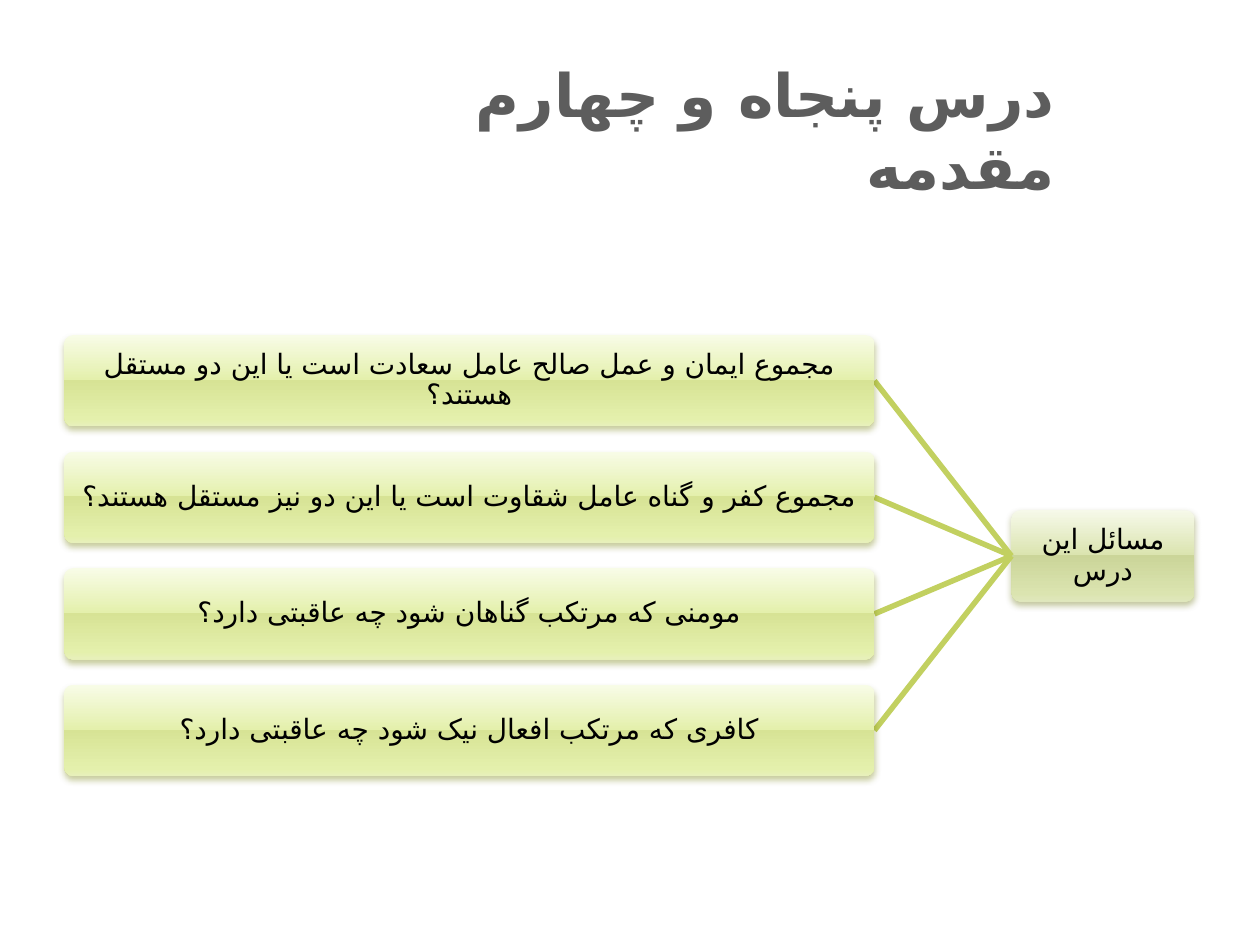
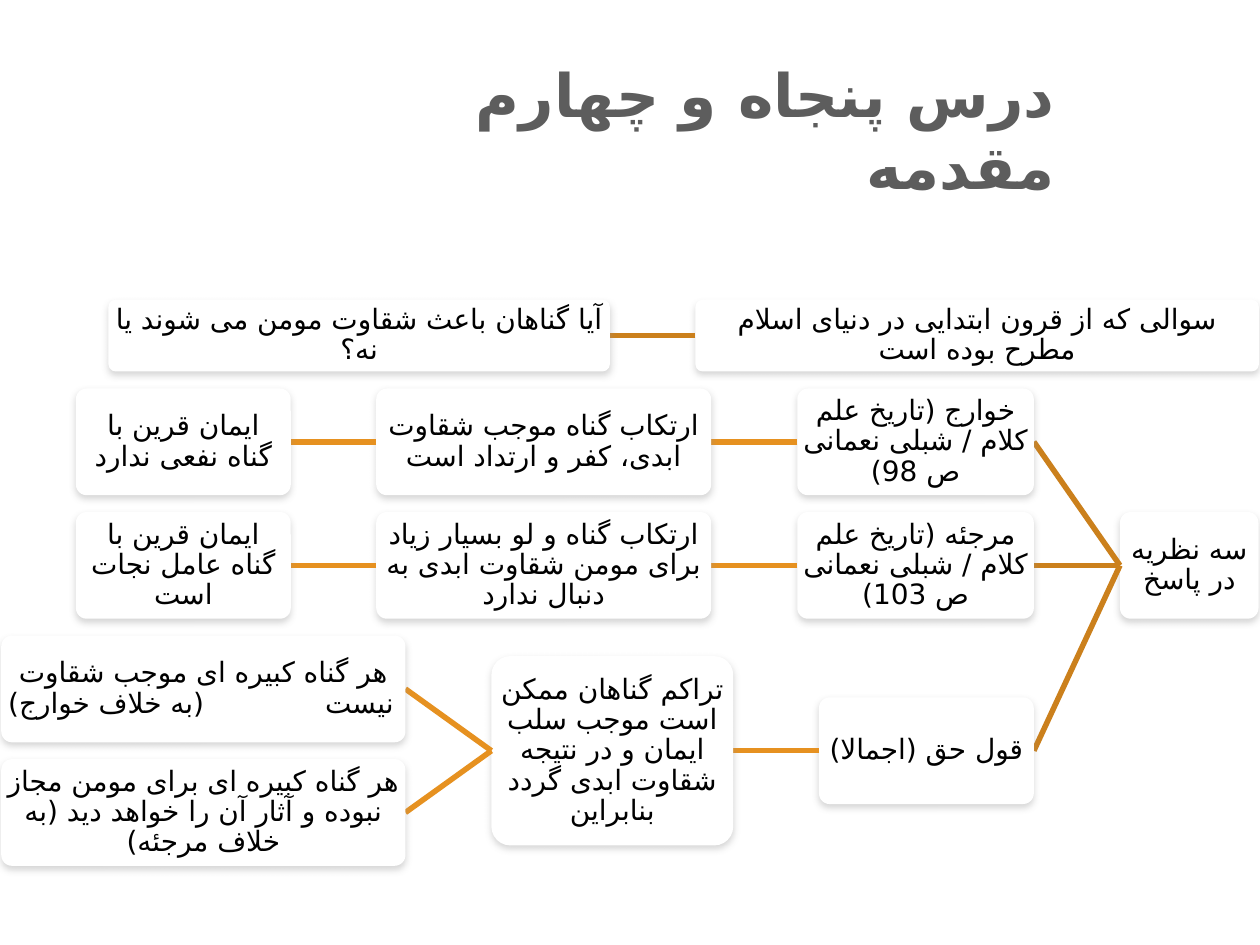
import pptx
import pptx.util
import pptx.dml.color
import pptx.enum.shapes
import pptx.enum.text
import pptx.oxml.ns
import lxml.etree

Pt = pptx.util.Pt
RGBColor = pptx.dml.color.RGBColor
ALIGN = pptx.enum.text.PP_ALIGN
ANCHOR = pptx.enum.text.MSO_ANCHOR
qn = pptx.oxml.ns.qn
sub = lxml.etree.SubElement

# Shared style
FONT = "Karla"
SCRIPT = "DejaVu Sans"  # Arabic letters, which Karla lacks
GREY = RGBColor(0x5D, 0x5D, 0x5D)
BLACK = RGBColor(0, 0, 0)
WHITE = RGBColor(255, 255, 255)
LIME = RGBColor(0xC2, 0xD0, 0x60)
BROWN = RGBColor(0xCB, 0x80, 0x1C)
AMBER = RGBColor(0xE6, 0x91, 0x20)
STOPS = (0, 49, 49, 92, 100)
ROOT = ("F6F9E9", "DBE4B0", "CBD599", "DBE4B0", "E0E7BE")
LEAF = ("F8FCE7", "E4F0AC", "D7E395", "E4F0AC", "E7F0BB")
TITLE = "درس پنجاه و چهارم\nمقدمه"


def write(frame, text, size, color, align, bold=False, space=1.0, side=0.9, anchor=ANCHOR.MIDDLE):
    """Fill a frame with right-to-left text."""
    frame.word_wrap = True
    frame.margin_left = frame.margin_right = Pt(side)
    frame.margin_top = frame.margin_bottom = 0
    frame.vertical_anchor = anchor
    frame.text = text
    for para in frame.paragraphs:
        para.alignment = align
        para.line_spacing = space
        para._p.get_or_add_pPr().set("rtl", "1")
        for run in para.runs:
            run.font.size = Pt(size)
            run.font.bold = bold
            run.font.name = FONT
            run.font.color.rgb = color
            sub(run._r.get_or_add_rPr(), qn("a:cs"), typeface=SCRIPT)


def node(slide, x, y, w, h, text, shade, tones=None):
    """Draw a rounded box with a soft shadow, white or graded."""
    box = slide.shapes.add_shape(
        pptx.enum.shapes.MSO_SHAPE.ROUNDED_RECTANGLE, Pt(x), Pt(y), Pt(w), Pt(h))
    box.adjustments[0] = 0.1
    if tones:
        box.fill.gradient()
        box.fill.gradient_angle = 270
        stops = box._element.spPr.find(".//" + qn("a:gsLst"))
        for old in list(stops):
            stops.remove(old)
        for pos, tone in zip(STOPS, tones):
            stop = sub(stops, qn("a:gs"), pos=str(pos * 1000))
            sub(stop, qn("a:srgbClr"), val=tone)
    else:
        box.fill.solid()
        box.fill.fore_color.rgb = WHITE
    box.line.fill.background()
    box.shadow.inherit = False
    glow = sub(box._element.spPr.find(qn("a:effectLst")), qn("a:outerShdw"),
               blurRad=str(Pt(4)), dist=str(Pt(2)), dir="5400000", rotWithShape="0")
    tint = sub(glow, qn("a:srgbClr"), val=shade)
    sub(tint, qn("a:alpha"), val="38000")
    write(box.text_frame, text, 16, BLACK, ALIGN.CENTER, space=0.9)
    return box


deck = pptx.Presentation()
deck.slide_width, deck.slide_height = Pt(720), Pt(540)

# Slide 1: four questions branching from one root
# Each item: x, y, w, h, text, parent index, link colour, shadow, tones
asks = [
    "مجموع ایمان و عمل صالح عامل سعادت است یا این دو مستقل هستند؟",
    "مجموع کفر و گناه عامل شقاوت است یا این دو نیز مستقل هستند؟",
    "مومنی که مرتکب گناهان شود چه عاقبتی دارد؟",
    "کافری که مرتکب افعال نیک شود چه عاقبتی دارد؟",
]
first = [(578, 291.6, 104.6, 52.2, "مسائل این درس", None, None, "626C00", ROOT)]
for i, ask in enumerate(asks):
    first.append((36.7, 191.5 + 66.6 * i, 463, 52.2, ask, 0, LIME, "6F7B00", LEAF))

# Slide 2: one question with its answer, then three theories
# Each item: x, w, row, h, text, parent index, link colour
TOP, STEP, HIGH = 222, 70.6, 61
plan = [
    (397.4, 322, -0.86, 41, "سوالی که از قرون ابتدایی در دنیای اسلام مطرح بوده است", None, None),
    (62, 286.5, -0.86, 41, "آیا گناهان باعث شقاوت مومن می شوند یا نه؟", 0, BROWN),
    (640, 79.2, 1, HIGH, "سه نظریه در پاسخ", None, None),
    (455.6, 135.2, 0, HIGH, "خوارج (تاریخ علم کلام / شبلی نعمانی ص 98)", 2, BROWN),
    (215, 191.4, 0, HIGH, "ارتکاب گناه موجب شقاوت ابدی، کفر و ارتداد است", 3, AMBER),
    (43.4, 122.8, 0, HIGH, "ایمان قرین با گناه نفعی ندارد", 4, AMBER),
    (455.6, 135.2, 1, HIGH, "مرجئه (تاریخ علم کلام / شبلی نعمانی ص 103)", 2, BROWN),
    (215, 191.4, 1, HIGH, "ارتکاب گناه و لو بسیار زیاد برای مومن شقاوت ابدی به دنبال ندارد", 6, AMBER),
    (43.4, 122.8, 1, HIGH, "ایمان قرین با گناه عامل نجات است", 7, AMBER),
    (468, 122.8, 2.5, HIGH, "قول حق (اجمالا)", 2, BROWN),
    (280.8, 138.2, 2.5, 108.2,
     "تراکم گناهان ممکن است موجب سلب ایمان و در نتیجه شقاوت ابدی گردد بنابراین", 9, AMBER),
    (0.7, 231, 2, HIGH, "هر گناه کبیره ای موجب شقاوت\nنیست", 10, AMBER),
    (0.7, 231, 3, HIGH,
     "هر گناه کبیره ای برای مومن مجاز نبوده و آثار آن را خواهد دید (به خلاف مرجئه)", 10, AMBER),
]
second = []
for x, w, row, h, text, up, color in plan:
    y = TOP + STEP * row + (HIGH - h) / 2
    second.append((x, y, w, h, text, up, color, "979797", None))

# Draw both slides
for tree in (first, second):
    slide = deck.slides.add_slide(deck.slide_layouts[6])

    # Title
    head = slide.shapes.add_textbox(Pt(36), Pt(25.2), Pt(570.2), Pt(90))
    write(head.text_frame, TITLE, 34.2, GREY, ALIGN.RIGHT, bold=True, side=3.6,
          anchor=ANCHOR.BOTTOM)

    # Links and boxes
    for x, y, w, h, text, up, color, shade, tones in tree:
        if up is not None:
            px, py, pw, ph = tree[up][:4]
            link = slide.shapes.add_connector(
                pptx.enum.shapes.MSO_CONNECTOR.STRAIGHT,
                Pt(px), Pt(py + ph / 2), Pt(x + w), Pt(y + h / 2))
            link.line.color.rgb = color
            link.line.width = Pt(3.15)
            sub(link._element.spPr, qn("a:effectLst"))
        box = node(slide, x, y, w, h, text, shade, tones)

        # Second line split to both sides of its box
        if "\n" in text:
            frame = box.text_frame
            frame.margin_left = frame.margin_right = Pt(5)
            frame.paragraphs[1].alignment = ALIGN.RIGHT
            aside = slide.shapes.add_textbox(Pt(x), Pt(y + h / 2), Pt(120), Pt(17.2))
            write(aside.text_frame, "(به خلاف خوارج)", 16, BLACK, ALIGN.CENTER, space=0.9)

deck.save("out.pptx")
